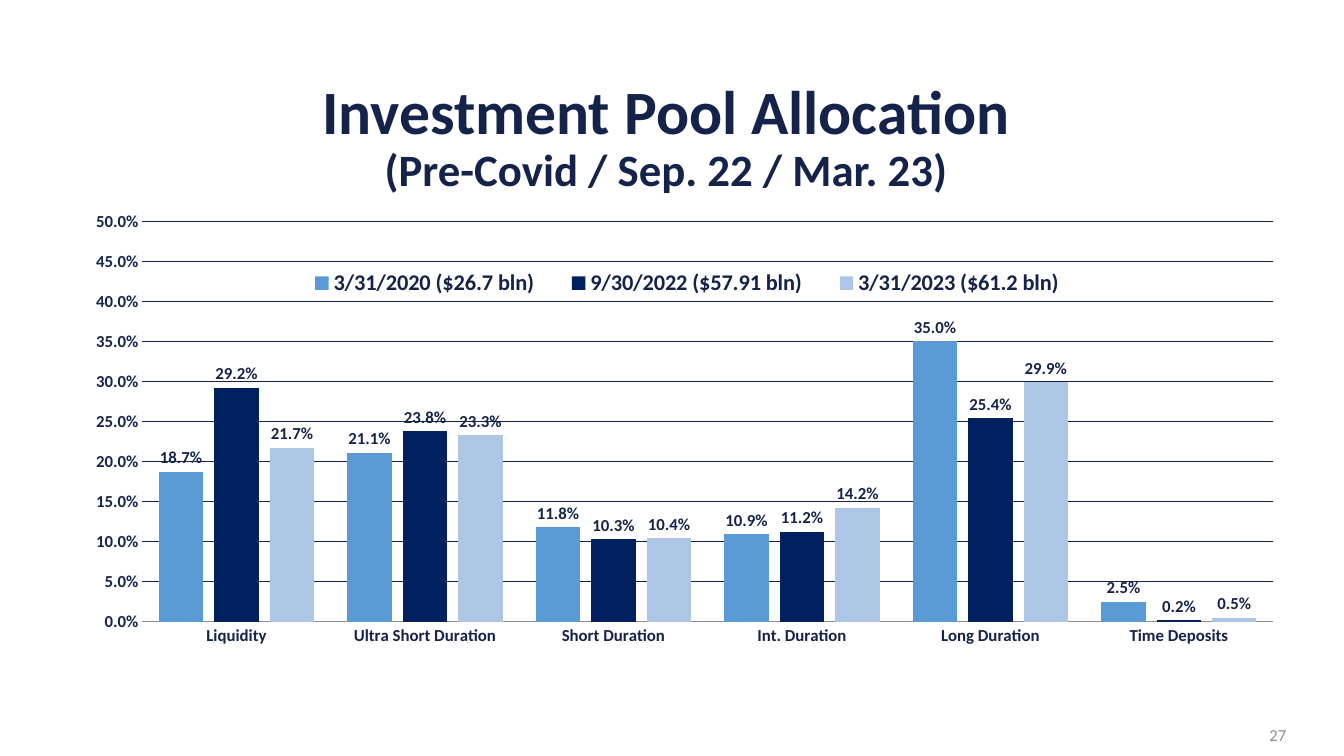
from pptx import Presentation
from pptx.chart.data import CategoryChartData
from pptx.dml.color import RGBColor
from pptx.enum import chart as ch, text
from pptx.oxml import parse_xml
from pptx.oxml.ns import nsdecls, qn
from pptx.util import Pt

NAVY = RGBColor(0x15, 0x23, 0x4A)
GRAY = RGBColor(0x8C, 0x8D, 0x96)
FONT = "Calibri"

CATEGORIES = ["Liquidity", "Ultra Short Duration", "Short Duration",
              "Int. Duration", "Long Duration", "Time Deposits"]
POOLS = [
    ("3/31/2020 ($26.7 bln)", RGBColor(0x5B, 0x9B, 0xD5),
     (0.187, 0.211, 0.118, 0.109, 0.35, 0.025)),
    ("9/30/2022 ($57.91 bln)", RGBColor(0x00, 0x20, 0x60),
     (0.292, 0.238, 0.103, 0.112, 0.254, 0.002)),
    ("3/31/2023 ($61.2 bln)", RGBColor(0xAD, 0xC6, 0xE5),
     (0.217, 0.233, 0.104, 0.142, 0.299, 0.005)),
]


def set_font(font, size, color=NAVY, bold=True):
    """Apply the deck font to a font object."""
    font.name, font.size, font.bold = FONT, Pt(size), bold
    font.color.rgb = color


def write(p, content, size, align=text.PP_ALIGN.CENTER, **fmt):
    """Add a formatted run to a paragraph."""
    p.alignment = align
    r = p.add_run()
    r.text = content
    set_font(r.font, size, **fmt)


def set_layout(parent, index, x, y, w, h, inner=False):
    """Give a chart part a manual layout in fractions of the chart."""
    for old in parent.findall(qn("c:layout")):
        parent.remove(old)
    target = '<c:layoutTarget val="inner"/>' if inner else ""
    parent.insert(index, parse_xml(
        f'<c:layout {nsdecls("c")}><c:manualLayout>{target}'
        '<c:xMode val="edge"/><c:yMode val="edge"/>'
        f'<c:x val="{x}"/><c:y val="{y}"/><c:w val="{w}"/><c:h val="{h}"/>'
        '</c:manualLayout></c:layout>'))


def add_title(slide, x, y, w, h):
    """Fill the title placeholder with a heading and a smaller second line."""
    sp = slide.shapes.title
    sp.left, sp.top, sp.width, sp.height = Pt(x), Pt(y), Pt(w), Pt(h)
    tf = sp.text_frame
    tf.word_wrap = True
    tf.auto_size = text.MSO_AUTO_SIZE.NONE
    tf.vertical_anchor = text.MSO_ANCHOR.MIDDLE
    p = tf.paragraphs[0]
    p.line_spacing = 0.9
    write(p, "Investment Pool Allocation", 44)
    p.add_line_break()
    write(p, "(Pre-Covid / Sep. 22 / Mar. 23)", 32)


def add_allocation_chart(slide, x, y, w, h):
    """Place the clustered columns with axes, labels and legend."""
    data = CategoryChartData(number_format="0.0%")
    data.categories = CATEGORIES
    for name, _, values in POOLS:
        data.add_series(name, values)
    chart = slide.shapes.add_chart(
        ch.XL_CHART_TYPE.COLUMN_CLUSTERED, Pt(x), Pt(y), Pt(w), Pt(h), data).chart
    chart.has_title = False
    set_font(chart.font, 12)

    plot = chart.plots[0]
    plot.gap_width, plot.overlap, plot.vary_by_categories = 75, -25, False
    for series, (_, color, _) in zip(plot.series, POOLS):
        series.format.fill.solid()
        series.format.fill.fore_color.rgb = color
        series.invert_if_negative = False
    plot.has_data_labels = True
    labels = plot.data_labels
    labels.show_value = True
    labels.number_format, labels.number_format_is_linked = "0.0%", False
    labels.position = ch.XL_LABEL_POSITION.OUTSIDE_END
    set_font(labels.font, 12)

    for axis in (chart.category_axis, chart.value_axis):
        axis.major_tick_mark = axis.minor_tick_mark = ch.XL_TICK_MARK.NONE
        set_font(axis.tick_labels.font, 12)
    line = chart.category_axis.format.line
    line.color.rgb, line.width = GRAY, Pt(0.5)
    values = chart.value_axis
    values.minimum_scale, values.maximum_scale, values.major_unit = 0, 0.5, 0.05
    values.tick_labels.number_format = "0.0%"
    values.tick_labels.number_format_is_linked = False
    values.format.line.fill.background()
    grid = values.major_gridlines.format.line
    grid.color.rgb, grid.width = NAVY, Pt(0.5)

    chart.has_legend = True
    legend = chart.legend
    legend.position = ch.XL_LEGEND_POSITION.BOTTOM
    legend.include_in_layout = False
    set_font(legend.font, 16)
    set_layout(legend._element, 1, 0.18, 0.13, 0.66, 0.08)
    set_layout(plot._element.getparent(), 0, 0.063, 0.041, 0.928, 0.835, inner=True)


def add_page_number(slide, x, y, w, h):
    """Write the page number at the right of its box."""
    tf = slide.shapes.add_textbox(Pt(x), Pt(y), Pt(w), Pt(h)).text_frame
    tf.word_wrap = True
    tf.vertical_anchor = text.MSO_ANCHOR.MIDDLE
    write(tf.paragraphs[0], "27", 12, align=text.PP_ALIGN.RIGHT, color=GRAY, bold=False)


def main():
    """Build the slide and save it."""
    prs = Presentation()
    prs.slide_width, prs.slide_height = Pt(960), Pt(540)
    slide = prs.slides.add_slide(prs.slide_layouts[5])
    add_page_number(slide, 710, 510.5, 216, 28.8)
    add_allocation_chart(slide, 46.8, 144, 870.5, 342.7)
    add_title(slide, 46.8, 54, 858.2, 90)
    prs.save("out.pptx")


if __name__ == "__main__":
    main()
